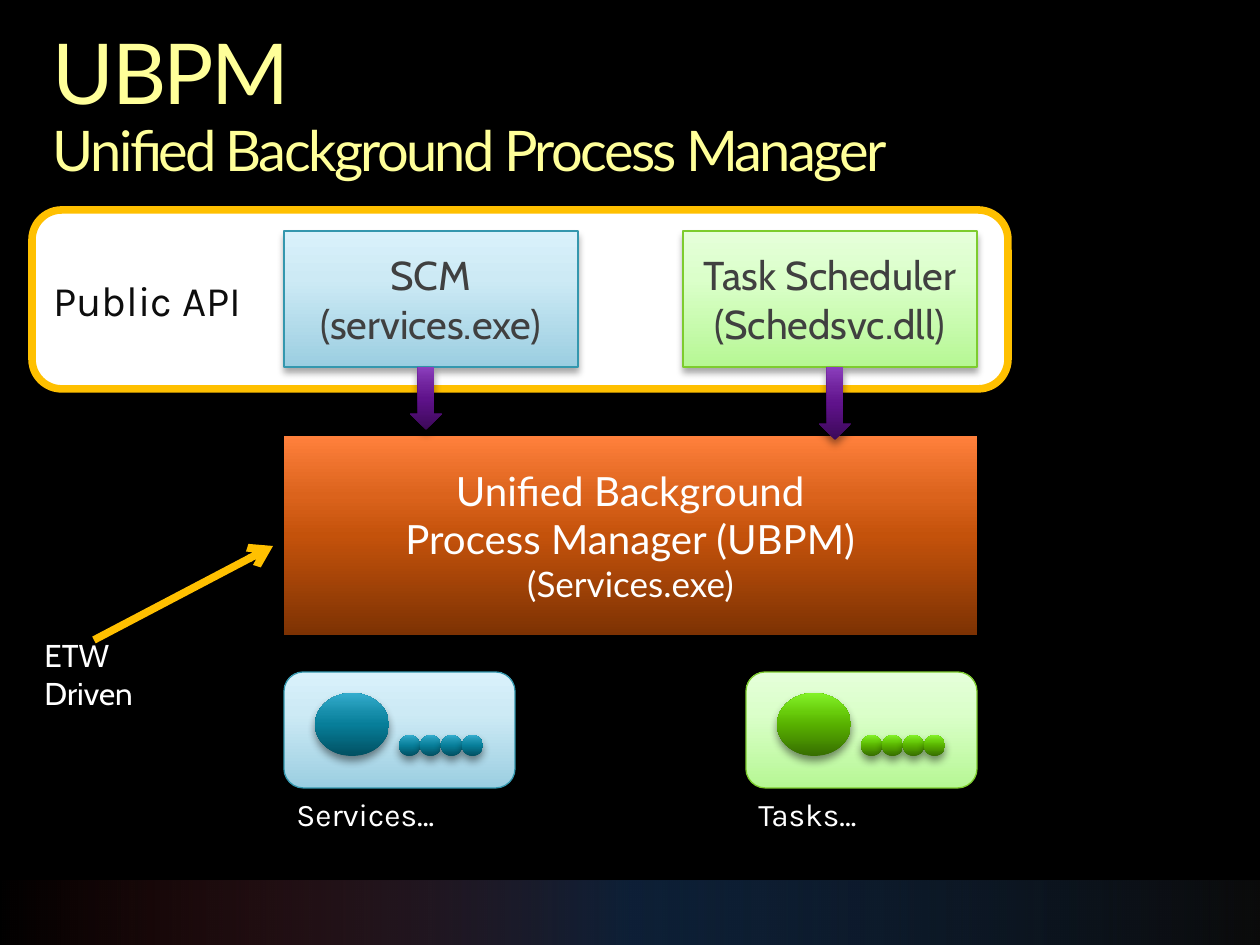
from lxml import etree
from pptx import Presentation
from pptx.dml.color import RGBColor
from pptx.enum.shapes import MSO_CONNECTOR, MSO_SHAPE
from pptx.enum.text import MSO_ANCHOR, PP_ALIGN
from pptx.oxml.ns import qn
from pptx.util import Pt

RECT, ROUND = MSO_SHAPE.RECTANGLE, MSO_SHAPE.ROUNDED_RECTANGLE
OVAL, DOWN_ARROW = MSO_SHAPE.OVAL, MSO_SHAPE.DOWN_ARROW
STRAIGHT = MSO_CONNECTOR.STRAIGHT
MIDDLE, TOP = MSO_ANCHOR.MIDDLE, MSO_ANCHOR.TOP
LEFT, CENTER = PP_ALIGN.LEFT, PP_ALIGN.CENTER

COLORS = {
    "black": "000000", "white": "FFFFFF", "gold": "FFC000", "title": "FFFF99",
    "ink": "0D0D0D", "gray": "404040", "blue": "3497AE", "green": "7DCC2E",
}
GRADIENTS = {
    "footer": [(0, "0D0D0D", 86), (50, "17375E", 58), (100, "CE3B37", 0)],
    "orange": [(0, "7D3203"), (50, "C4520B"), (70, "DB631C"), (100, "FF803C")],
    "purple": [(0, "3C0958"), (50, "5F128B"), (70, "6F229C"), (100, "8B3FBD")],
    "blue pale": [(0, "9BCEE1"), (65, "CDEAF5"), (100, "D9F1FB")],
    "blue deep": [(0, "015062"), (50, "077E99"), (70, "178EAB"), (100, "35ADCE")],
    "green pale": [(0, "B6F794"), (65, "DBFFCA"), (100, "E5FFDA")],
    "green deep": [(0, "376E00"), (50, "58B100"), (70, "68CC0B"), (100, "83F229")],
}
SOFT, STRONG = (35, 4), (45, 5)


class Diagram:
    """Draws styled elements on one slide, with lengths in px."""

    SCALE = 914400 / 126

    def __init__(self, width, height):
        self.deck = Presentation()
        self.deck.slide_width, self.deck.slide_height = self.emu(width, height)
        self.slide = self.deck.slides.add_slide(self.deck.slide_layouts[6])
        background = self.slide.background.fill
        background.solid()
        background.fore_color.rgb = self.rgb("black")

    def emu(self, *lengths):
        return [round(length * self.SCALE) for length in lengths]

    def rgb(self, color):
        return RGBColor.from_string(COLORS[color])

    def node(self, parent, tag, **attributes):
        values = {key: str(int(value)) if isinstance(value, int) else value
                  for key, value in attributes.items()}
        return etree.SubElement(parent, qn(tag), values)

    def color_node(self, parent, color, opacity):
        color_element = self.node(parent, "a:srgbClr", val=color)
        if opacity < 100:
            self.node(color_element, "a:alpha", val=opacity * 1000)

    def gradient(self, shape, name, angle):
        shape.fill.gradient()
        gradient = shape._element.spPr.find(qn("a:gradFill"))
        for child in list(gradient):
            gradient.remove(child)
        stops = self.node(gradient, "a:gsLst")
        for position, color, *opacity in GRADIENTS[name]:
            stop = self.node(stops, "a:gs", pos=position * 1000)
            self.color_node(stop, color, *(opacity or [100]))
        self.node(gradient, "a:lin", ang=angle * 60000, scaled=0)

    def shadow(self, effects, opacity, blur):
        outer = self.node(effects, "a:outerShdw", blurRad=Pt(blur), dist=Pt(3),
                          dir=90 * 60000, rotWithShape=0)
        self.color_node(outer, COLORS["black"], opacity)

    def shape(self, kind, box, fill, line=None, weight=0.75, shadow=None,
              angle=270, parent=None):
        shape = (parent or self.slide).shapes.add_shape(kind, *self.emu(*box))
        if fill in GRADIENTS:
            self.gradient(shape, fill, angle)
        else:
            shape.fill.solid()
            shape.fill.fore_color.rgb = self.rgb(fill)
        if line:
            shape.line.color.rgb = self.rgb(line)
            shape.line.width = Pt(weight)
        else:
            shape.line.fill.background()
        shape.shadow.inherit = False
        if shadow:
            self.shadow(shape._element.spPr.find(qn("a:effectLst")), *shadow)
        return shape

    def set_text(self, shape, text, sizes, font, color, align=CENTER, anchor=MIDDLE):
        frame = shape.text_frame
        frame.word_wrap = True
        frame.vertical_anchor = anchor
        frame.text = text
        runs = [run for paragraph in frame.paragraphs for run in paragraph.runs]
        for paragraph in frame.paragraphs:
            paragraph.alignment = align
        for run, size in zip(runs, sizes):
            run.font.size = Pt(size)
            run.font.name = font
            run.font.color.rgb = self.rgb(color)
        return runs

    def label(self, box, text, font, size=18, parent=None):
        label = (parent or self.slide).shapes.add_textbox(*self.emu(*box))
        self.set_text(label, text, [size], font, "white", LEFT, TOP)

    def title(self, box, text, sizes):
        title = self.slide.shapes.add_textbox(*self.emu(*box))
        frame = title.text_frame
        frame.margin_left = frame.margin_right = 0
        frame.margin_top = frame.margin_bottom = 0
        for run in self.set_text(title, text, sizes, "Lato", "title", LEFT, TOP):
            run._r.get_or_add_rPr().set("spc", "-150")
        frame.paragraphs[0].line_spacing = 0.9

    def arrow(self, start, end, color, weight):
        arrow = self.slide.shapes.add_connector(STRAIGHT, *self.emu(*start, *end))
        arrow.line.color.rgb = self.rgb(color)
        arrow.line.width = Pt(weight)
        outline = arrow._element.spPr.find(qn("a:ln"))
        self.node(outline, "a:tailEnd", type="arrow")
        effects = self.node(arrow._element.spPr, "a:effectLst")
        self.shadow(effects, *SOFT)

    def process_group(self, left, hue, caption):
        group = self.slide.shapes.add_group_shape()
        top = 672
        self.shape(ROUND, (left, top, 231, 116), f"{hue} pale", hue,
                   shadow=SOFT, parent=group)
        dots = [(31, 21, 74, 63)] + [(115 + 21 * i, 63, 21, 21) for i in range(4)]
        for x, y, width, height in dots:
            self.shape(OVAL, (left + x, top + y, width, height), f"{hue} deep",
                       shadow=STRONG, parent=group)
        self.label((left, top + 117, 231, 50), caption, "Karla", parent=group)


def main():
    diagram = Diagram(1260, 945)
    diagram.shape(RECT, (0, 881, 1260, 64), "footer", angle=180)
    public_api = diagram.shape(ROUND, (32, 210, 976, 179), "white", "gold", 4.33)
    diagram.set_text(public_api, "Public API", [24], "Karla", "ink", LEFT)
    diagram.title((53, 32, 1155, 152),
                  "UBPM\vUnified Background Process Manager", [48, 32])

    manager = diagram.shape(RECT, (284, 436, 693, 199), "orange", shadow=STRONG)
    diagram.set_text(manager,
                     "Unified Background\nProcess Manager (UBPM)\n(Services.exe)",
                     [23, 23, 20], "Lato", "white")

    diagram.process_group(284, "blue", "Services…")
    diagram.process_group(746, "green", "Tasks…")

    for left, hue, text in ((284, "blue", "SCM\n(services.exe)"),
                            (683, "green", "Task Scheduler\n(Schedsvc.dll)")):
        client = diagram.shape(RECT, (left, 231, 294, 136), f"{hue} pale", hue,
                               shadow=SOFT)
        diagram.set_text(client, text, [23, 23], "Cabin", "gray")

    for left, height in ((410, 63), (819, 73)):
        diagram.shape(DOWN_ARROW, (left, 367, 32, height), "purple", shadow=STRONG)

    diagram.arrow((94, 640), (273, 546), "gold", 4.33)
    diagram.label((32, 630, 168, 90), "ETW Driven", "Cabin")
    diagram.deck.save("out.pptx")


if __name__ == "__main__":
    main()
